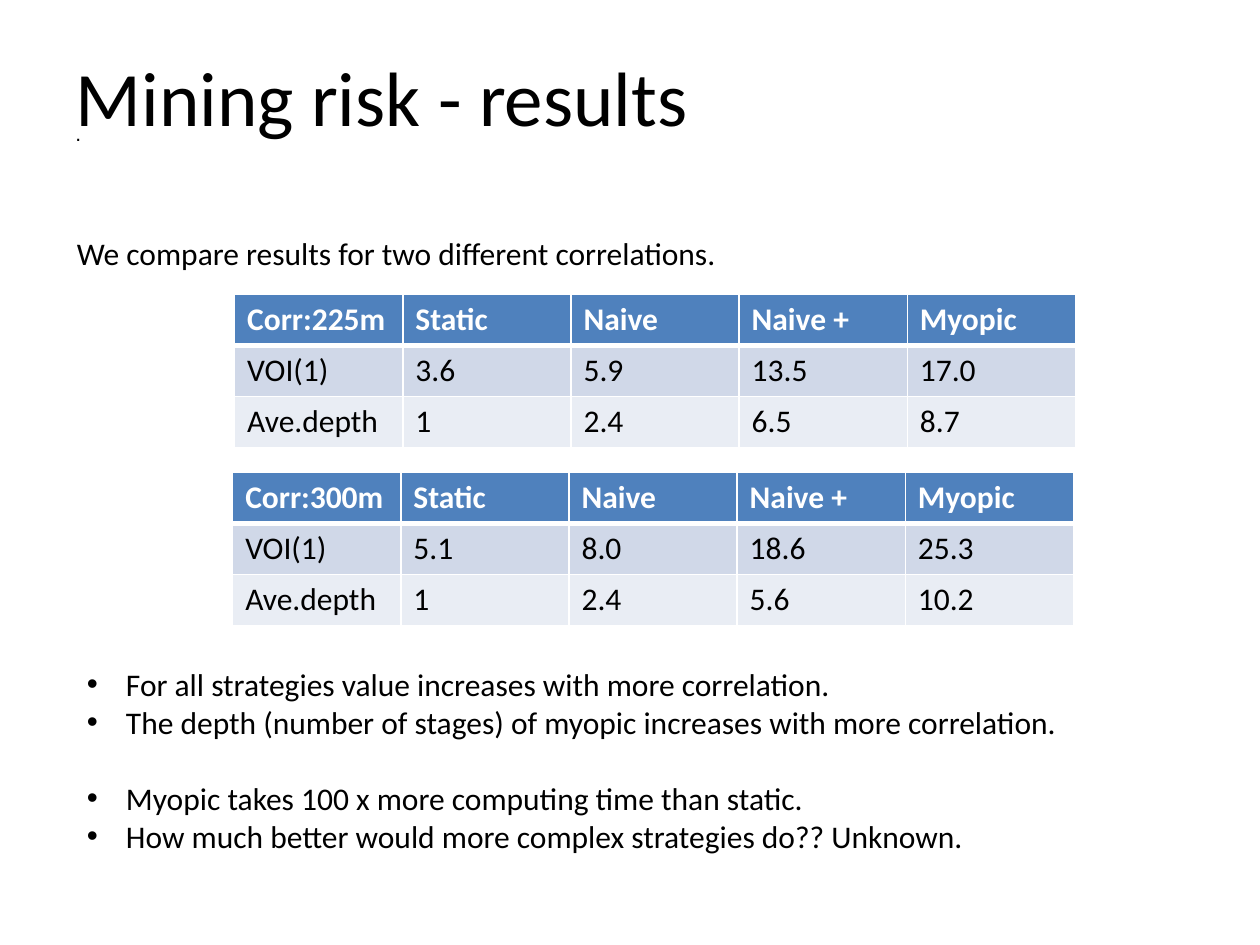
"""Build the mining risk results slide."""
from dataclasses import dataclass

from lxml import etree
from pptx import Presentation
from pptx import util as u
from pptx.dml.color import RGBColor
from pptx.enum import text as t
from pptx.oxml import ns

HUES = {"ink": "000000", "white": "FFFFFF", "head": "4F81BD", "odd": "D0D8E8", "even": "E9EDF4"}
COLS = ("Static", "Naive", "Naive +", "Myopic")
COL, ROW = u.Cm(3.39), u.Cm(1.03)


@dataclass
class Box:
    left: float
    top: float
    width: float
    height: float

    def place(self) -> tuple:
        return u.Cm(self.left), u.Cm(self.top), u.Cm(self.width), u.Cm(self.height)


@dataclass
class Grid:
    left: float
    top: float
    corr: str
    voi: tuple
    depth: tuple


GRIDS = (
    Grid(4.73, 5.93, "225m", ("3.6", "5.9", "13.5", "17.0"), ("1", "2.4", "6.5", "8.7")),
    Grid(4.69, 9.52, "300m", ("5.1", "8.0", "18.6", "25.3"), ("1", "2.4", "5.6", "10.2")),
)
POINTS = (
    ("For all strategies value increases with more correlation.", 0),
    ("The depth (number of stages) of myopic increases with more correlation.", 0),
    ("Myopic takes 100 x more computing time than static.", 22),
    ("How much better would more complex strategies do?? Unknown.", 0),
)


def style(para, size: int = 18, hue: str = "ink", face: str = "Calibri", bold: bool = False) -> None:
    font = para.font
    font.size, font.name, font.bold = u.Pt(size), face, bold
    font.color.rgb = RGBColor.from_string(HUES[hue])


def add_text(slide, box: Box, *lines: str):
    frame = slide.shapes.add_textbox(*box.place()).text_frame
    frame.word_wrap = True
    frame.text = "\n".join(lines)
    for para in frame.paragraphs:
        style(para)
    return frame


def add_edges(cell, base: int) -> None:
    props = cell._tc.get_or_add_tcPr()
    for spot, (side, width) in enumerate((("L", 1), ("R", 1), ("T", 1), ("B", base))):
        line = etree.Element(ns.qn(f"a:ln{side}"), w=str(u.Pt(width)))
        fill = etree.SubElement(line, ns.qn("a:solidFill"))
        etree.SubElement(fill, ns.qn("a:srgbClr"), val=HUES["white"])
        props.insert(spot, line)


def add_grid(slide, grid: Grid) -> None:
    rows = (
        (f"Corr:{grid.corr}", *COLS),
        ("VOI(1)", *grid.voi),
        ("Ave.depth", *grid.depth),
    )
    size = len(rows), len(rows[0])
    table = slide.shapes.add_table(
        *size, u.Cm(grid.left), u.Cm(grid.top), COL * size[1], ROW * size[0]
    ).table
    for col in table.columns:
        col.width = COL
    for r, (row, hue) in enumerate(zip(rows, ("head", "odd", "even"))):
        table.rows[r].height = ROW
        for c, word in enumerate(row):
            cell = table.cell(r, c)
            cell.text = word
            style(cell.text_frame.paragraphs[0], hue="ink" if r else "white", bold=not r)
            cell.fill.solid()
            cell.fill.fore_color.rgb = RGBColor.from_string(HUES[hue])
            add_edges(cell, 1 if r else 3)


def add_points(slide, box: Box) -> None:
    frame = add_text(slide, box, *(line for line, _ in POINTS))
    for para, (_, gap) in zip(frame.paragraphs, POINTS):
        para.space_before = u.Pt(gap)
        props = para._p.get_or_add_pPr()
        props.set("marL", str(u.Cm(0.79)))
        props.set("indent", str(-u.Cm(0.79)))
        mark = etree.Element(ns.qn("a:buFont"), typeface="Arial")
        props.find(ns.qn("a:spcBef")).addnext(mark)
        mark.addnext(etree.Element(ns.qn("a:buChar"), char="•"))


def add_title(slide, box: Box) -> None:
    title = slide.shapes.title
    title.left, title.top, title.width, title.height = box.place()
    frame = title.text_frame
    frame.text = "Mining risk - results"
    frame.vertical_anchor = t.MSO_ANCHOR.MIDDLE
    para = frame.paragraphs[0]
    para.alignment = t.PP_ALIGN.LEFT
    style(para, 44)


def add_dot(slide, box: Box) -> None:
    frame = add_text(slide, box, ".")
    frame.vertical_anchor = t.MSO_ANCHOR.MIDDLE
    para = frame.paragraphs[0]
    para.alignment = t.PP_ALIGN.JUSTIFY
    style(para, 12, face="Arial")


def main() -> None:
    deck = Presentation()
    deck.slide_width, deck.slide_height = u.Cm(25.4), u.Cm(19.05)
    slide = deck.slides.add_slide(deck.slide_layouts[5])
    add_dot(slide, Box(1.27, 2.69, 25.4, 0))
    add_title(slide, Box(1.27, 0.33, 23.83, 3.18))
    add_points(slide, Box(1.5, 13.28, 22.2, 5.64))
    add_text(slide, Box(1.3, 4.6, 18.59, 1.02), "We compare results for two different correlations.")
    for grid in GRIDS:
        add_grid(slide, grid)
    deck.save("out.pptx")


if __name__ == "__main__":
    main()
